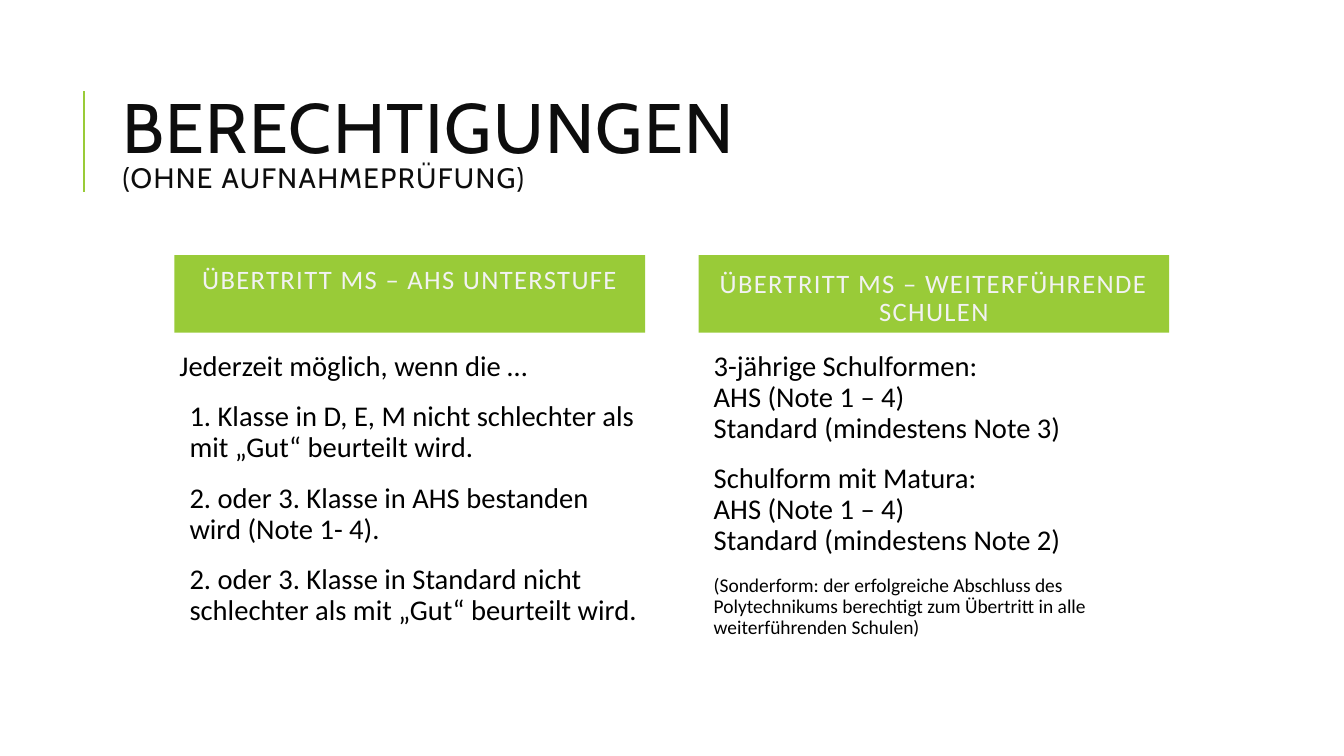
from pptx import Presentation
from pptx.dml.color import RGBColor
from pptx.enum import shapes, text
from pptx.oxml.ns import qn
from pptx.util import Pt
from lxml import etree

# Content: title lines with sizes, then columns of (text, size, left margin)
TITLE = [("BERECHTIGUNGEN", 50), ("(OHNE AUFNAHMEPRÜFUNG)", 20)]
BODY, NOTE, INDENT = 20.4, 13.9, 7.2
COLUMNS = [
    {
        "heading": "ÜBERTRITT MS – AHS UNTERSTUFE",
        "heading_bottom": 26.5,
        "body": [
            ("Jederzeit möglich, wenn die …", BODY, 0),
            ("1. Klasse in D, E, M nicht schlechter als mit „Gut“ beurteilt wird.", BODY, INDENT),
            ("2. oder 3. Klasse in AHS bestanden wird (Note 1- 4).", BODY, INDENT),
            ("2. oder 3. Klasse in Standard nicht schlechter als mit „Gut“ beurteilt wird.", BODY, INDENT),
        ],
    },
    {
        "heading": "ÜBERTRITT MS – WEITERFÜHRENDE SCHULEN",
        "heading_bottom": 3.6,
        "body": [
            ("3-jährige Schulformen:\nAHS (Note 1 – 4)\nStandard (mindestens Note 3)", BODY, INDENT),
            ("Schulform mit Matura:\nAHS (Note 1 – 4)\nStandard (mindestens Note 2)", BODY, INDENT),
            ("(Sonderform: der erfolgreiche Abschluss des Polytechnikums berechtigt "
             "zum Übertritt in alle weiterführenden Schulen)", NOTE, INDENT),
        ],
    },
]

# Colours and layout, in points
GREEN = RGBColor(0x99, 0xCB, 0x38)
PALE = RGBColor(0xF2, 0xF2, 0xF2)
BLACK = RGBColor(0, 0, 0)
INK = RGBColor(0x0D, 0x0D, 0x0D)
COLUMN_LEFT, COLUMN_STEP, COLUMN_WIDTH = 124.6, 374.4, 336.2
HEADING_TOP, HEADING_HEIGHT = 182.2, 55.4
BODY_TOP, BODY_HEIGHT = 247.7, 230.4
INSET = 3.6


def set_all(target, values):
    for name, value in values.items():
        setattr(target, name, value)


def set_frame(frame, anchor, side=INSET, bottom=INSET):
    set_all(frame, {
        "word_wrap": True, "vertical_anchor": anchor,
        "margin_left": Pt(side), "margin_right": Pt(side),
        "margin_top": Pt(INSET), "margin_bottom": Pt(bottom),
    })


def style_run(run, name, size, color, spacing=0):
    set_all(run.font, {"name": name, "size": Pt(size)})
    run.font.color.rgb = color
    if spacing:
        run.font._element.set("spc", str(spacing * 100))


presentation = Presentation()
set_all(presentation, {"slide_width": Pt(960), "slide_height": Pt(540)})
slide = presentation.slides.add_slide(presentation.slide_layouts[6])

# Accent line beside the title
accent = slide.shapes.add_connector(
    shapes.MSO_CONNECTOR.STRAIGHT, Pt(60), Pt(136.8), Pt(60), Pt(65))
accent.line.color.rgb = GREEN
accent.line.width = Pt(1.5)
etree.SubElement(accent._element.spPr, qn("a:effectLst"))

# Title
title = slide.shapes.add_textbox(Pt(80.6), Pt(46.1), Pt(765.4), Pt(118.1)).text_frame
set_frame(title, text.MSO_ANCHOR.MIDDLE, side=7.2)
paragraph = title.paragraphs[0]
paragraph.line_spacing = 0.8
for index, (line, size) in enumerate(TITLE):
    if index:
        paragraph.add_line_break()
    run = paragraph.add_run()
    run.text = line
    style_run(run, "Cabin", size, INK, spacing=1)

# Columns: green heading above body text
for index, column in enumerate(COLUMNS):
    left = Pt(COLUMN_LEFT + index * COLUMN_STEP)
    heading = slide.shapes.add_shape(
        shapes.MSO_SHAPE.RECTANGLE, left, Pt(HEADING_TOP), Pt(COLUMN_WIDTH), Pt(HEADING_HEIGHT))
    heading.shadow.inherit = False
    heading.fill.solid()
    heading.fill.fore_color.rgb = GREEN
    heading.line.fill.background()
    set_frame(heading.text_frame, text.MSO_ANCHOR.BOTTOM, bottom=column["heading_bottom"])
    paragraph = heading.text_frame.paragraphs[0]
    set_all(paragraph, {"text": column["heading"], "alignment": text.PP_ALIGN.CENTER,
                        "line_spacing": 0.9, "space_after": Pt(2)})
    style_run(paragraph.runs[0], "Calibri", 19, PALE, spacing=1)

    body = slide.shapes.add_textbox(
        left, Pt(BODY_TOP), Pt(COLUMN_WIDTH), Pt(BODY_HEIGHT)).text_frame
    set_frame(body, text.MSO_ANCHOR.TOP)
    for row, (words, size, indent) in enumerate(column["body"]):
        paragraph = body.add_paragraph() if row else body.paragraphs[0]
        set_all(paragraph, {"text": words, "line_spacing": 0.9,
                            "space_before": Pt(12 if row else 0), "space_after": Pt(2)})
        paragraph._p.get_or_add_pPr().set("marL", str(Pt(indent)))
        for run in paragraph.runs:
            style_run(run, "Calibri", size, BLACK)

presentation.save("out.pptx")
